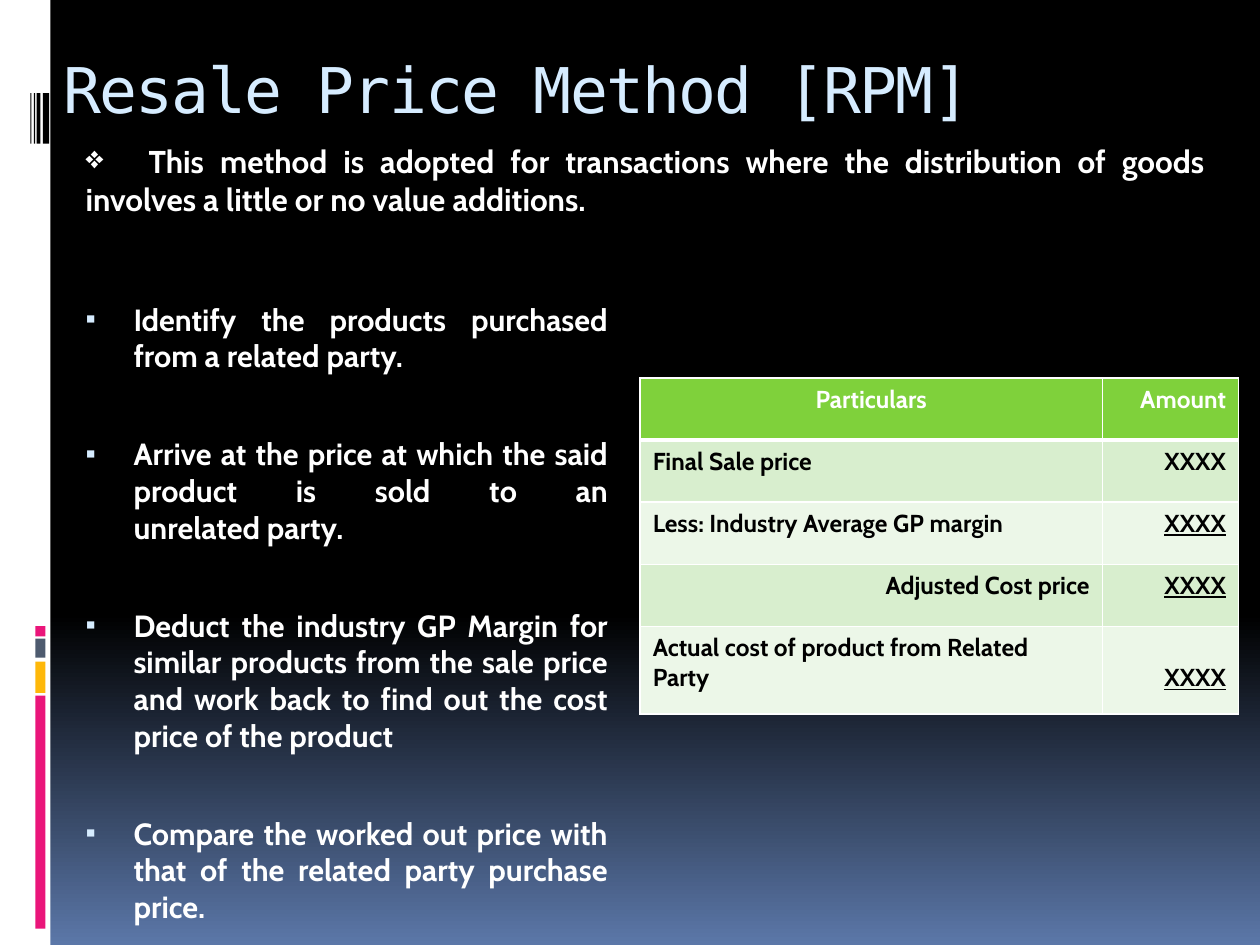
import copy

import pptx
import pptx.dml.color
import pptx.enum.shapes
import pptx.enum.text
import pptx.oxml
import pptx.oxml.ns
import pptx.util
from lxml import etree

Pt = pptx.util.Pt
qn = pptx.oxml.ns.qn
ALIGN = pptx.enum.text.PP_ALIGN
ANCHOR = pptx.enum.text.MSO_ANCHOR

COLORS = {
    "black": "000000", "white": "FFFFFF", "dusk": "5B77A8", "ice": "D6ECFF",
    "pink": "EA157A", "amber": "FEB80A", "slate": "4E5B6F",
    "green": "7FD13B", "mint": "D8EECE", "pale": "ECF7E8",
}


def rgb(name):
    return pptx.dml.color.RGBColor.from_string(COLORS[name])


class SlideBuilder:
    """Holds the style and the current slide."""

    text_font = "Cabin"
    title_font = "DejaVu Sans Mono"

    def __init__(self, page):
        self.page = page

    def background(self):
        fill = self.page.background.fill
        fill.gradient()
        fill.gradient_angle = 270
        for stop, position, color in zip(fill.gradient_stops, (0, 1), ("black", "dusk")):
            stop.position = position
            stop.color.rgb = rgb(color)
        first = next(self.page._element.iter(qn("a:gs")))
        middle = copy.deepcopy(first)
        middle.set("pos", "65000")
        first.addnext(middle)

    def bar(self, left, top, width, height, color):
        shape = self.page.shapes.add_shape(
            pptx.enum.shapes.MSO_SHAPE.RECTANGLE, Pt(left), Pt(top), Pt(width), Pt(height))
        shape.shadow.inherit = False
        shape.fill.solid()
        shape.fill.fore_color.rgb = rgb(color)
        shape.line.fill.background()

    def place(self, box, left, top, width, height):
        box.left, box.top, box.width, box.height = Pt(left), Pt(top), Pt(width), Pt(height)
        frame = box.text_frame
        frame.word_wrap = True
        frame.auto_size = pptx.enum.text.MSO_AUTO_SIZE.NONE
        frame.vertical_anchor = ANCHOR.TOP
        return frame

    def style(self, para, size, color, align, bold=True, font=None):
        para.alignment = align
        para.font.name = font or self.text_font
        para.font.size = Pt(size)
        para.font.bold = bold
        para.font.color.rgb = rgb(color)

    def bullet(self, para, char, color, percent=100, margin=0, indent=0):
        props = para._p.get_or_add_pPr()
        props.set("marL", str(Pt(margin)))
        props.set("indent", str(Pt(indent)))
        bullet_color = etree.SubElement(props, qn("a:buClr"))
        etree.SubElement(bullet_color, qn("a:srgbClr"), val=COLORS[color])
        etree.SubElement(props, qn("a:buSzPct"), val=str(percent * 1000))
        etree.SubElement(props, qn("a:buChar"), char=char)

    def title(self, text, *area):
        frame = self.place(self.page.shapes.title, *area)
        frame.margin_left, frame.margin_top = Pt(6), Pt(7)
        para = frame.paragraphs[0]
        span = para.add_run()
        span.text = text
        span._r.get_or_add_rPr().set("spc", "-100")
        para.line_spacing = 1.5
        self.style(para, 36, "ice", ALIGN.LEFT, bold=False, font=self.title_font)

    def steps(self, texts, *area):
        frame = self.place(self.page.placeholders[1], *area)
        frame.margin_top = Pt(32)
        for index, text in enumerate(texts):
            para = frame.add_paragraph() if index else frame.paragraphs[0]
            para.text = text
            self.bullet(para, "▪", "ice", 95, margin=32.4, indent=-27.4)
            para.space_before = Pt(35 if index else 0)
            self.style(para, 17.5, "white", ALIGN.JUSTIFY)

    def intro(self, text, *area):
        frame = self.place(self.page.shapes.add_textbox(0, 0, 0, 0), *area)
        para = frame.paragraphs[0]
        para.text = text
        self.bullet(para, "❖", "white")
        self.style(para, 18, "white", ALIGN.JUSTIFY)

    def borders(self, cell, bottom=1):
        props = cell._tc.get_or_add_tcPr()
        for index, side in enumerate("LRTB"):
            line = etree.Element(qn("a:ln" + side), w=str(Pt(bottom if side == "B" else 1)))
            fill = etree.SubElement(line, qn("a:solidFill"))
            etree.SubElement(fill, qn("a:srgbClr"), val=COLORS["white"])
            props.insert(index, line)

    def table(self, rows, left, top, widths, heights):
        table = self.page.shapes.add_table(
            len(rows), len(widths), Pt(left), Pt(top),
            Pt(sum(widths)), Pt(sum(heights))).table
        for column, width in zip(table.columns, widths):
            column.width = Pt(width)
        for r, (row, height) in enumerate(zip(rows, heights)):
            table.rows[r].height = Pt(height)
            label, amount, label_align, underline = row
            for c, (text, align) in enumerate(((label, label_align), (amount, ALIGN.RIGHT))):
                cell = table.cell(r, c)
                cell.text = text
                cell.fill.solid()
                fill = "green" if r == 0 else "mint" if r % 2 else "pale"
                cell.fill.fore_color.rgb = rgb(fill)
                self.borders(cell, bottom=1 if r else 3)
                para = cell.text_frame.paragraphs[0]
                self.style(para, 14, "black" if r else "white", align)
                para.font.underline = underline and c == 1
        return table


def main():
    deck = pptx.Presentation()
    deck.slide_width, deck.slide_height = Pt(720), Pt(540)
    builder = SlideBuilder(deck.slides.add_slide(deck.slide_layouts[1]))
    builder.background()

    # Left strip, colour blocks and barcode
    builder.bar(0, 0, 28.8, 540, "white")
    for top, height, color in ((397.5, 133.2, "pink"), (378, 18, "amber"),
                               (365, 10.8, "slate"), (357.8, 5.8, "pink")):
        builder.bar(20.2, top, 5.8, height, color)
    for left, width in ((24.5, 3.6), (20.9, 2.2), (19.4, 0.7), (17.3, 0.7)):
        builder.bar(left, 53.3, width, 28.8, "black")

    # Title and text
    builder.title("Resale Price Method [RPM]", 30.2, 0, 666, 54)
    builder.steps([
        "Identify the products purchased from a related party.",
        "Arrive at the price at which the said product is sold to an\vunrelated party.",
        "Deduct the industry GP Margin for similar products from the sale price "
        "and work back to find out the cost price of the product",
        "Compare the worked out price with that of the related party purchase price.",
    ], 36.7, 139.7, 318.2, 356.4)

    # Worked calculation
    table = builder.table([
        ("Particulars", "Amount", ALIGN.CENTER, False),
        ("Final Sale price", "XXXX", ALIGN.LEFT, False),
        ("Less: Industry Average GP margin", "XXXX", ALIGN.LEFT, True),
        ("Adjusted Cost price", "XXXX", ALIGN.RIGHT, True),
        ("Actual cost of product from Related Party", "XXXX", ALIGN.LEFT, True),
    ], 365.8, 216, (264.2, 77.8), [35.5] * 4 + [50])
    last_amount = table.cell(4, 1)
    last_amount.vertical_anchor = ANCHOR.BOTTOM
    last_amount.margin_bottom = Pt(12)

    # Introduction
    builder.intro("\tThis method is adopted for transactions where the distribution of goods "
                  "involves a little or no value additions.", 41.8, 77.8, 653.8, 51.1)

    deck.save("out.pptx")


if __name__ == "__main__":
    main()
